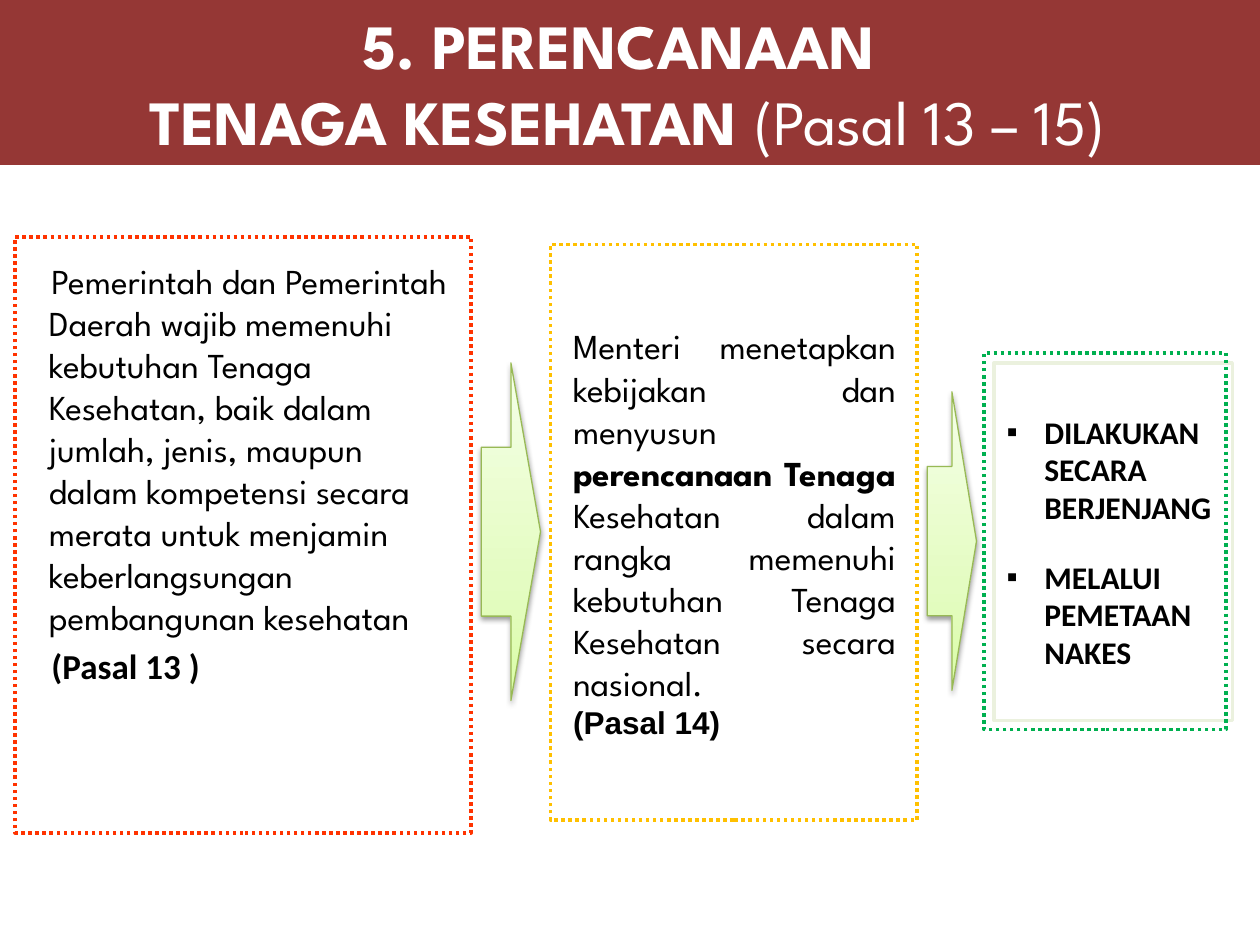
from dataclasses import dataclass

from pptx import Presentation
from pptx.dml.color import RGBColor
from pptx.enum.dml import MSO_LINE
from pptx.enum.shapes import MSO_SHAPE
from pptx.enum.text import MSO_ANCHOR, PP_ALIGN
from pptx.oxml import parse_xml
from pptx.oxml.ns import nsdecls, qn
from pptx.util import Inches, Pt

RECTANGLE, RIGHT_ARROW = MSO_SHAPE.RECTANGLE, MSO_SHAPE.RIGHT_ARROW
TOP, MIDDLE = MSO_ANCHOR.TOP, MSO_ANCHOR.MIDDLE
LEFT, CENTER, JUSTIFY = PP_ALIGN.LEFT, PP_ALIGN.CENTER, PP_ALIGN.JUSTIFY
DOTTED = MSO_LINE.ROUND_DOT


@dataclass(frozen=True)
class Theme:
    """Colours, fonts and type sizes of the deck."""
    banner: str = "953735"
    white: str = "FFFFFF"
    ink: str = "000000"
    duty: str = "FF3300"
    policy: str = "FFC000"
    method: str = "00B050"
    method_box: str = "EBF1DE"
    arrow_line: str = "98B955"
    arrow_stops: tuple = ((0, "DAFDA7"), (35, "E4FCC2"), (100, "F5FFE7"))
    display: str = "League Spartan"
    body: str = "Calibri"
    plain: str = "Arial"
    title_size: int = 36
    text_size: int = 20
    note_size: int = 18


THEME = Theme()


def set_all(target, values):
    """Set each named attribute of the target."""
    for name, value in values.items():
        setattr(target, name, value)


def add_block(page, box, kind=RECTANGLE, fill=None, line=None, width=0, dash=None):
    """Add a preset shape in the box (left, top, width, height in inches)."""
    shape = page.shapes.add_shape(kind, *map(Inches, box))
    shape.shadow.inherit = False
    if fill:
        shape.fill.solid()
        shape.fill.fore_color.rgb = RGBColor.from_string(fill)
    else:
        shape.fill.background()
    if line:
        shape.line.color.rgb = RGBColor.from_string(line)
        set_all(shape.line, {"width": Pt(width), "dash_style": dash})
    else:
        shape.line.fill.background()
    return shape


def write(shape, paragraphs, anchor, color=THEME.ink, **layout):
    """Write paragraphs, each a list of (text, font, size, bold) spans."""
    frame = shape.text_frame
    set_all(frame, {"word_wrap": True, "vertical_anchor": anchor})
    for index, spans in enumerate(paragraphs):
        para = frame.add_paragraph() if index else frame.paragraphs[0]
        set_all(para, layout)
        for text, font, size, bold in spans:
            span = para.add_run()
            span.text = text
            set_all(span.font, {"name": font, "size": Pt(size), "bold": bold})
            span.font.color.rgb = RGBColor.from_string(color)
    return frame.paragraphs


def indent(para, margin, first, bullet=None):
    """Set the left margin and first-line indent, with an optional bullet."""
    props = para._p.get_or_add_pPr()
    props.set("marL", str(Inches(margin)))
    props.set("indent", str(Inches(first)))
    if bullet:
        props.append(parse_xml(f'<a:buFont {nsdecls("a")} typeface="{THEME.plain}"/>'))
        props.append(parse_xml(f'<a:buChar {nsdecls("a")} char="{bullet}"/>'))


def add_banner(page, box):
    """Place the title banner."""
    font, size = THEME.display, THEME.title_size
    lines = [
        [("5. PERENCANAAN ", font, size, True)],
        [("TENAGA KESEHATAN ", font, size, True), ("(Pasal 13 – 15)", font, size, False)],
    ]
    write(add_block(page, box, fill=THEME.banner), lines, MIDDLE, THEME.white, alignment=CENTER)


def add_duty(page, box, frame_box):
    """Place the government's duty and its dotted frame."""
    shape = add_block(page, box, line=THEME.white, width=4.5)
    size = THEME.text_size
    lines = [
        [("Pemerintah dan Pemerintah Daerah wajib memenuhi kebutuhan Tenaga "
          "Kesehatan, baik dalam jumlah, jenis, maupun dalam kompetensi secara "
          "merata untuk menjamin keberlangsungan pembangunan kesehatan",
          THEME.display, size, False)],
        [("(Pasal 13 )", THEME.body, size, True)],
    ]
    for para in write(shape, lines, TOP, alignment=LEFT, space_before=Pt(4)):
        indent(para, 0.1, 0.02)
    add_block(page, frame_box, line=THEME.duty, width=2, dash=DOTTED)


def add_policy(page, box, frame_box):
    """Place the minister's policy and its dotted frame."""
    shape = add_block(page, box, line=THEME.white, width=4.5)
    font, size = THEME.display, THEME.text_size
    lines = [
        [("Menteri menetapkan kebijakan dan menyusun ", font, size, False),
         ("perencanaan Tenaga ", font, size, True),
         ("Kesehatan dalam rangka memenuhi kebutuhan Tenaga Kesehatan secara nasional.",
          font, size, False)],
        [("(Pasal 14)", THEME.plain, THEME.note_size, True)],
    ]
    write(shape, lines, MIDDLE, alignment=JUSTIFY)
    add_block(page, frame_box, line=THEME.policy, width=2, dash=DOTTED)


def add_method(page, box, frame_box):
    """Place the bulleted method and its dotted frame."""
    shape = add_block(page, box, line=THEME.method_box, width=2)
    lines = [[(text, THEME.body, THEME.note_size, True)]
             for text in ("DILAKUKAN SECARA BERJENJANG", "MELALUI PEMETAAN NAKES")]
    layout = {"alignment": LEFT, "space_before": Pt(12), "space_after": Pt(6)}
    for para in write(shape, lines, MIDDLE, **layout):
        indent(para, 0.3, -0.3, "▪")
    add_block(page, frame_box, line=THEME.method, width=2, dash=DOTTED)


def add_arrow(page, box):
    """Place a shaded block arrow with a soft shadow."""
    shape = add_block(page, box, RIGHT_ARROW, THEME.white, THEME.arrow_line, 0.75)
    stops = "".join(f'<a:gs pos="{place * 1000}"><a:srgbClr val="{color}"/></a:gs>'
                    for place, color in THEME.arrow_stops)
    props = shape._element.spPr
    props.replace(props.find(qn("a:solidFill")), parse_xml(
        f'<a:gradFill {nsdecls("a")} rotWithShape="1"><a:gsLst>{stops}</a:gsLst>'
        '<a:lin ang="16200000" scaled="0"/></a:gradFill>'))
    props.find(qn("a:effectLst")).append(parse_xml(
        f'<a:outerShdw {nsdecls("a")} blurRad="{Pt(3.1)}" dist="{Pt(1.6)}" '
        'dir="5400000" rotWithShape="0"><a:srgbClr val="000000">'
        '<a:alpha val="38000"/></a:srgbClr></a:outerShdw>'))


def main():
    """Build and save the deck."""
    deck = Presentation()
    set_all(deck, {"slide_width": Inches(10), "slide_height": Inches(7.5)})
    page = deck.slides.add_slide(deck.slide_layouts[6])
    add_banner(page, (-0.04, 0, 10.04, 1.31))
    add_duty(page, (0.19, 2.01, 3.48, 4.49), (0.12, 1.88, 3.62, 4.73))
    add_arrow(page, (3.82, 2.88, 0.47, 2.68))
    add_policy(page, (4.45, 2.01, 2.76, 4.44), (4.37, 1.94, 2.91, 4.57))
    add_arrow(page, (7.36, 3.11, 0.39, 2.37))
    add_method(page, (7.89, 2.88, 1.89, 2.84), (7.81, 2.8, 1.92, 2.99))
    deck.save("out.pptx")


if __name__ == "__main__":
    main()
